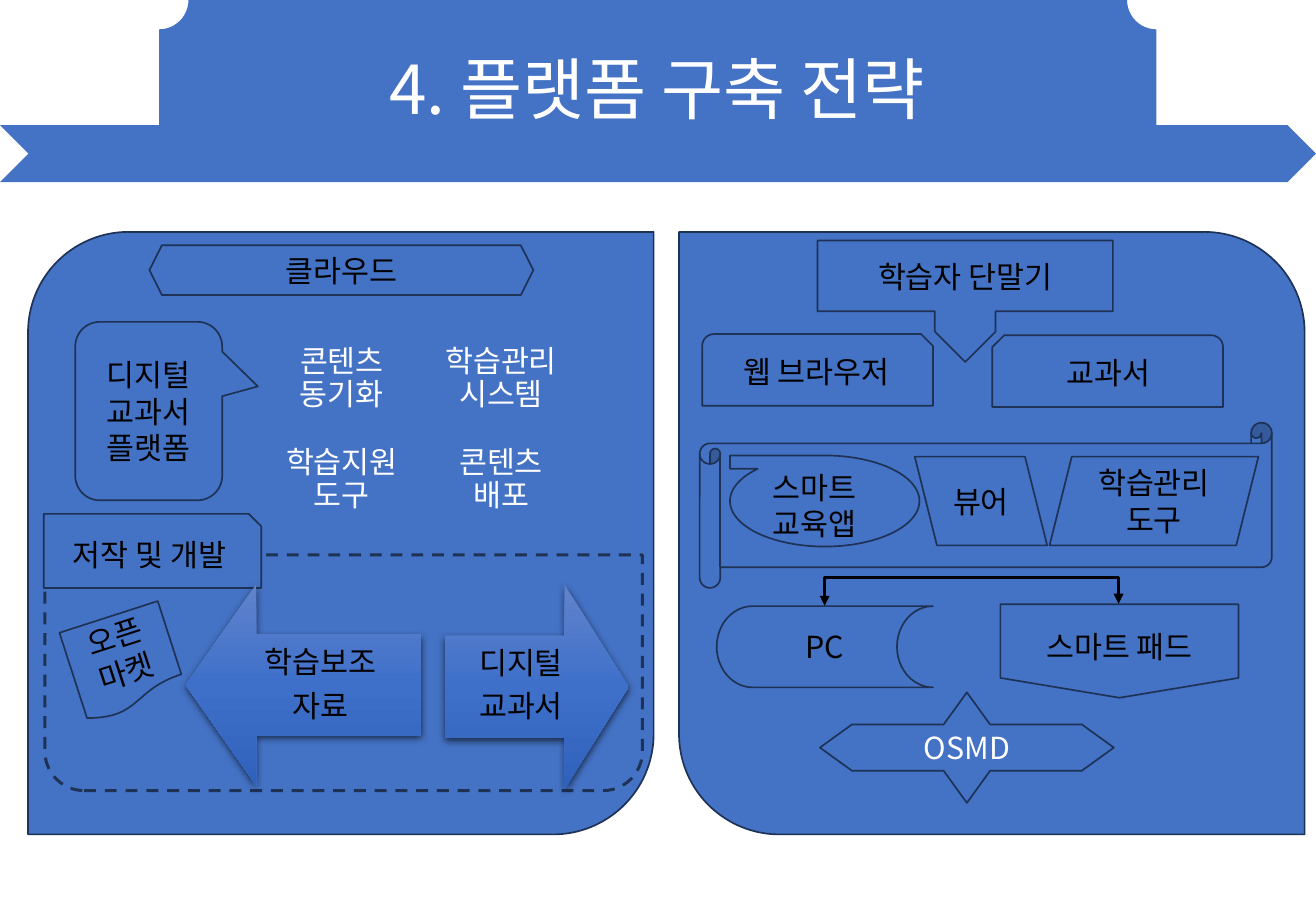
from lxml import etree
from pptx import Presentation
from pptx.dml.color import RGBColor
from pptx.enum import dml, shapes, text
from pptx.oxml import parse_xml
from pptx.oxml.ns import nsdecls, qn
from pptx.util import Pt

BLUE = RGBColor(0x44, 0x72, 0xC4)
NAVY = RGBColor(0x1E, 0x32, 0x56)
BLACK = RGBColor(0, 0, 0)
WHITE = RGBColor(255, 255, 255)
ARROW_STOPS = {
    0: RGBColor(0x61, 0x83, 0xCB),
    50000: RGBColor(0x3E, 0x70, 0xCA),
    100000: RGBColor(0x30, 0x62, 0xBB),
}
FONT = "Noto Sans CJK KR"
TIGHT = {"line_spacing": 0.9, "space_after": Pt(6.3)}
PRESET = shapes.MSO_SHAPE

deck = Presentation()
deck.slide_width, deck.slide_height = Pt(780), Pt(540)
page = deck.slides.add_slide(deck.slide_layouts[6])


def write(box, lines, color=BLACK, size=18, inset=None, wrap=True,
          anchor=text.MSO_ANCHOR.MIDDLE, align=text.PP_ALIGN.CENTER, spacing=None):
    """Fill a shape or text box with one paragraph per line."""
    frame = box.text_frame
    frame.word_wrap = wrap
    frame.vertical_anchor = anchor
    if inset is not None:
        for side in ("left", "top", "right", "bottom"):
            setattr(frame, f"margin_{side}", Pt(inset))
    for index, line in enumerate(lines):
        para = frame.add_paragraph() if index else frame.paragraphs[0]
        para.alignment = align
        for name, value in (spacing or {}).items():
            setattr(para, name, value)
        span = para.add_run()
        span.text = line
        for name, value in {"name": FONT, "size": Pt(size)}.items():
            setattr(span.font, name, value)
        span.font.color.rgb = color
        east_asian = etree.SubElement(span.font._element, qn("a:ea"))
        east_asian.set("typeface", FONT)


def draw(preset, frame, lines=(), outline=1, flip="", rotation=0, adjust=(), **style):
    """Add a blue preset shape; flip holds H, V or both."""
    shape = page.shapes.add_shape(preset, *map(Pt, frame))
    shape.shadow.inherit = False
    shape.fill.solid()
    shape.fill.fore_color.rgb = BLUE
    if outline:
        shape.line.color.rgb = NAVY
        shape.line.width = Pt(outline)
    else:
        shape.line.fill.background()
    shape.rotation = rotation
    for axis in flip:
        shape.element.spPr.find(qn("a:xfrm")).set("flip" + axis, "1")
    for index, value in enumerate(adjust):
        shape.adjustments[index] = value
    write(shape, lines, **style)
    return shape


# Title ribbon
draw(PRESET.CHEVRON, (0, 74.2, 780, 33.8), outline=0)
draw(PRESET.PLAQUE, (94.3, 0, 591.1, 104.4), outline=0)
title = page.shapes.add_textbox(Pt(53.3), Pt(2.9), Pt(672.5), Pt(104.4))
write(title, ["4. 플랫폼 구축 전략"], WHITE, 40, spacing={"line_spacing": 0.9})

# Cloud panel
draw(PRESET.ROUND_2_DIAG_RECTANGLE, (16.6, 137.5, 370.8, 357.1))
draw(PRESET.HEXAGON, (88.6, 145.4, 227.5, 29.5), ["클라우드"])
draw(PRESET.ROUNDED_RECTANGULAR_CALLOUT, (44.6, 190.8, 87.1, 105.8),
     ["디지털교과서플랫폼"], adjust=(0.743, -0.138, 0.167))

services = ["콘텐츠 동기화", "학습관리 시스템", "학습지원 도구", "콘텐츠 배포"]
for index, service in enumerate(services):
    row, column = divmod(index, 2)
    draw(PRESET.RECTANGLE, (159.8 + 94.3 * column, 199.4 + 59.8 * row, 85.7, 51.1),
         [service], outline=0, color=WHITE, inset=5, spacing=TIGHT)

market = draw(PRESET.ROUND_2_SAME_RECTANGLE, (26.6, 329, 354.2, 139.7),
              outline=1.75, flip="V")
market.line.dash_style = dml.MSO_LINE.DASH
draw(PRESET.SNIP_1_RECTANGLE, (25.9, 304.6, 128.9, 43.9), ["저작 및 개발"])
draw(PRESET.FLOWCHART_DOCUMENT, (42.5, 364.3, 61.2, 56.9), ["오픈", "마켓"],
     rotation=342.1)

stops = "".join(f'<a:gs pos="{position}"><a:srgbClr val="{color}"/></a:gs>'
                for position, color in ARROW_STOPS.items())
for frame, rotation, label_frame, lines in [
    ((120.2, 336.2, 119.5, 139.7), 270, (130.3, 376.6, 118.8, 59.8), ["학습보조", "자료"]),
    ((257.8, 352.8, 121, 108.7), 90, (264.2, 376.6, 89.3, 60.5), ["디지털", "교과서"]),
]:
    arrow = draw(PRESET.UP_ARROW, frame, outline=0, rotation=rotation, adjust=(0.5, 0.35))
    properties = arrow.element.spPr
    properties.replace(properties.find(qn("a:solidFill")), parse_xml(
        f'<a:gradFill {nsdecls("a")} rotWithShape="0"><a:gsLst>{stops}</a:gsLst>'
        '<a:lin ang="5400000" scaled="0"/></a:gradFill>'))
    properties.find(qn("a:effectLst")).append(parse_xml(
        f'<a:outerShdw {nsdecls("a")} blurRad="57150" dist="19050" dir="5400000" '
        'algn="ctr" rotWithShape="0"><a:srgbClr val="000000">'
        '<a:alpha val="63000"/></a:srgbClr></a:outerShdw>'))
    label = page.shapes.add_textbox(*map(Pt, label_frame))
    write(label, lines, inset=10, spacing=TIGHT)

# Learner device panel
draw(PRESET.ROUND_2_DIAG_RECTANGLE, (402.5, 137.5, 370.8, 357.1), flip="H")
draw(PRESET.DOWN_ARROW_CALLOUT, (484.6, 142.6, 175, 72), ["학습자 단말기"],
     adjust=(0.5, 0.25, 0.25, 0.583))
draw(PRESET.SNIP_ROUND_RECTANGLE, (416.2, 198, 136.8, 42.5), ["웹 브라우저"])
draw(PRESET.SNIP_ROUND_RECTANGLE, (588.2, 198.7, 136.8, 42.5), ["교과서"], flip="H")
draw(PRESET.HORIZONTAL_SCROLL, (414.7, 250.6, 339.1, 97.9))
draw(PRESET.FLOWCHART_SEQUENTIAL_ACCESS_STORAGE, (432.7, 270, 112.3, 54), flip="HV")
draw(PRESET.PARALLELOGRAM, (542.2, 270.7, 78.5, 52.6), ["뷰어"], flip="H")
draw(PRESET.PARALLELOGRAM, (622.1, 270.7, 123.8, 52.6), ["학습관리", "도구"])
app_label = page.shapes.add_textbox(Pt(450.7), Pt(274.3), Pt(69.1), Pt(51.1))
write(app_label, ["스마트", "교육앱"], wrap=False, anchor=text.MSO_ANCHOR.TOP,
      align=text.PP_ALIGN.LEFT)
app_label.text_frame.auto_size = text.MSO_AUTO_SIZE.SHAPE_TO_FIT_TEXT

draw(PRESET.FLOWCHART_STORED_DATA, (424.8, 359.3, 128.2, 48.2), ["PC"])
pad = draw(PRESET.PENTAGON, (635.8, 315.4, 55.4, 141.1), ["스마트 패드"],
           rotation=90, adjust=(0.212,))
pad.text_frame._txBody.bodyPr.set("vert", "vert270")

# Two-headed bent arrow between PC and smart pad
link = page.shapes.add_connector(shapes.MSO_CONNECTOR.ELBOW, Pt(575.3), Pt(271.4),
                                 Pt(576.56), Pt(445.6))
link.line.color.rgb = BLACK
link.line.width = Pt(1.5)
properties = link.element.spPr
for name, value in {"rot": "16200000", "flipH": "1", "flipV": "1"}.items():
    properties.find(qn("a:xfrm")).set(name, value)
guides = properties.find(qn("a:prstGeom")).get_or_add_avLst()
etree.SubElement(guides, qn("a:gd"), name="adj1", fmla="val -1256200")
for end in ("a:headEnd", "a:tailEnd"):
    etree.SubElement(properties.find(qn("a:ln")), qn(end), type="triangle")
etree.SubElement(properties, qn("a:effectLst"))

draw(PRESET.QUAD_ARROW, (486, 410.4, 174.2, 65.5), ["OSMD"], color=WHITE,
     adjust=(0.419, 0.21, 0.344))

deck.save("out.pptx")
